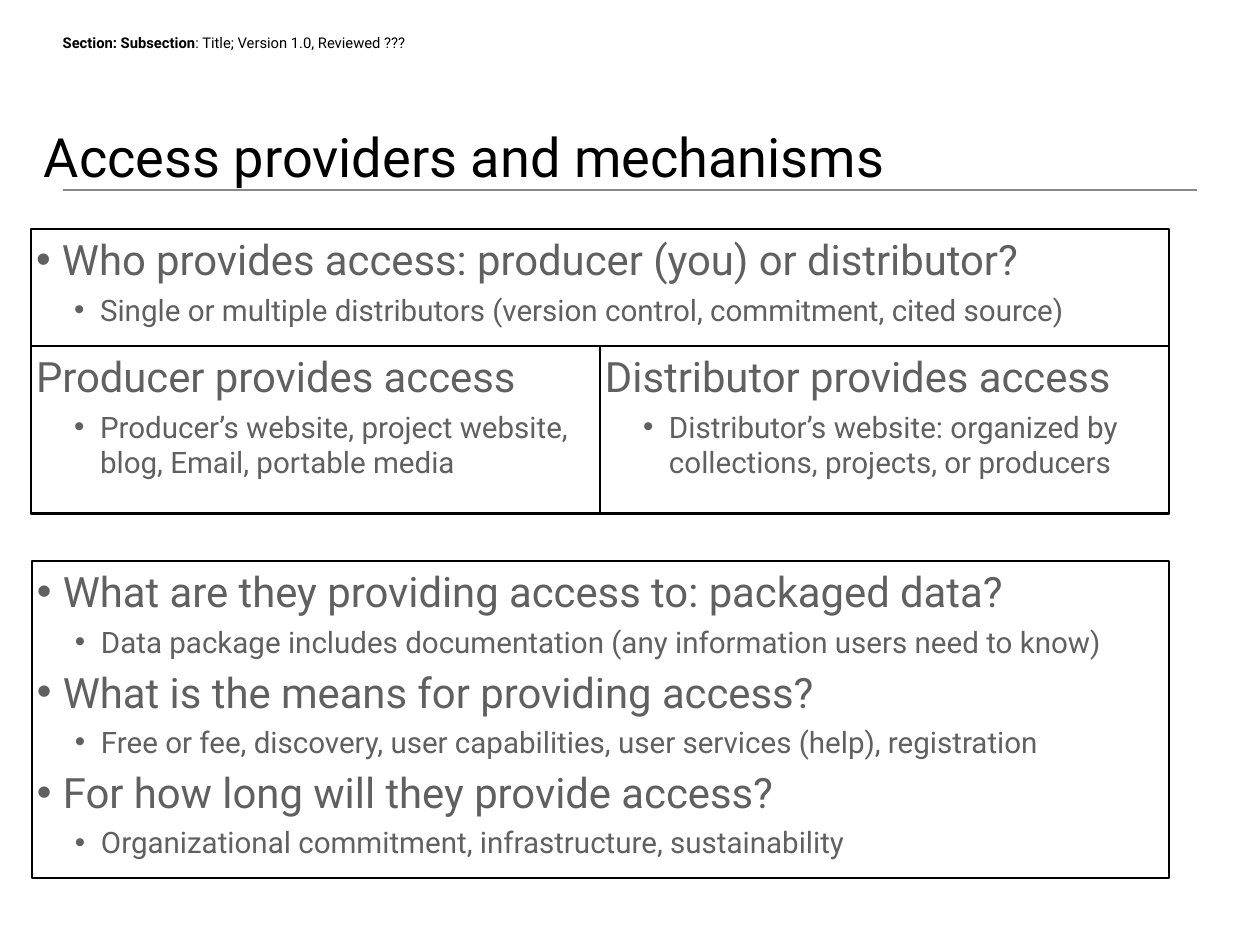
import pptx
import pptx.util
import pptx.dml.color
import pptx.enum.shapes
import pptx.enum.text
import pptx.oxml.ns
import lxml.etree

PX = 10320
SLIDE = (1260, 945)
FONT, BLACK, GREY, RULE = "Roboto", "000000", "606060", "888888"
HEADER = [("Section: Subsection", True), (": Title; Version 1.0, Reviewed ???", False)]
HEADER_AT = (54, 29, 361, 27)
TITLE = "Access providers and mechanisms"
TITLE_AT = (39, 57, 1165, 136)
RULE_AT = (63, 190, 1197, 190)
INSET, HANG, DETAIL_INDENT = 5, 26, 64
QUESTION, HEADING, DETAIL = "question", "heading", "detail"
STYLES = {QUESTION: (34, 0, HANG), HEADING: (34, 0, 0), DETAIL: (24, 1, DETAIL_INDENT)}
LEFT, HALF, SPLIT_TOP, SPLIT_HEIGHT = 31, 569, 346, 167

PANELS = [
    ((32, 561, 1137, 317), [
        (QUESTION, "What are they providing access to: packaged data?"),
        (DETAIL, "Data package includes documentation (any information users need to know)"),
        (QUESTION, "What is the means for providing access?"),
        (DETAIL, "Free or fee, discovery, user capabilities, user services (help), registration"),
        (QUESTION, "For how long will they provide access?"),
        (DETAIL, "Organizational commitment, infrastructure, sustainability"),
    ]),
    ((LEFT, 229, 2 * HALF, 285), [
        (QUESTION, "Who provides access: producer (you) or distributor?"),
        (DETAIL, "Single or multiple distributors (version control, commitment, cited source)"),
    ]),
]
PROVIDERS = [
    [(HEADING, "Producer provides access"),
     (DETAIL, "Producer’s website, project website, blog, Email, portable media")],
    [(HEADING, "Distributor provides access"),
     (DETAIL, "Distributor’s website: organized by collections, projects, or producers")],
]


def px(*lengths):
    return [pptx.util.Emu(length * PX) for length in lengths]


def color(value):
    return pptx.dml.color.RGBColor.from_string(value)


def add_run(paragraph, text, size, fill, bold=False):
    run = paragraph.add_run()
    run.text = text
    run.font.name, run.font.size, run.font.bold = FONT, pptx.util.Pt(size), bold
    run.font.color.rgb = color(fill)


def set_frame(frame, anchor):
    frame.word_wrap = True
    frame.auto_size = pptx.enum.text.MSO_AUTO_SIZE.NONE
    frame.vertical_anchor = anchor
    frame.margin_left, frame.margin_top, frame.margin_right, frame.margin_bottom = px(*[INSET] * 4)


def add_bullet(paragraph, indent):
    qn = pptx.oxml.ns.qn
    properties = paragraph._p.get_or_add_pPr()
    properties.set("marL", str(indent * PX))
    properties.set("indent", str(-HANG * PX))
    bullet_color = lxml.etree.SubElement(properties, qn("a:buClr"))
    lxml.etree.SubElement(bullet_color, qn("a:srgbClr"), val=GREY)
    lxml.etree.SubElement(properties, qn("a:buFont"), typeface="Arial")
    lxml.etree.SubElement(properties, qn("a:buChar"), char="•")


def add_panel(slide, place, lines):
    panel = slide.shapes.add_shape(pptx.enum.shapes.MSO_SHAPE.RECTANGLE, *px(*place))
    panel.shadow.inherit = False
    panel.fill.background()
    panel.line.color.rgb = color(BLACK)
    panel.line.width = pptx.util.Pt(2)
    frame = panel.text_frame
    set_frame(frame, pptx.enum.text.MSO_ANCHOR.TOP)
    for number, (kind, text) in enumerate(lines):
        size, level, indent = STYLES[kind]
        paragraph = frame.add_paragraph() if number else frame.paragraphs[0]
        if indent:
            add_bullet(paragraph, indent)
        paragraph.level = level
        paragraph.alignment = pptx.enum.text.PP_ALIGN.LEFT
        paragraph.space_before = pptx.util.Pt(6 if number else 0)
        add_run(paragraph, text, size, GREY)


def main():
    """Build the slide on access providers and mechanisms."""
    deck = pptx.Presentation()
    deck.slide_width, deck.slide_height = px(*SLIDE)
    slide = deck.slides.add_slide(deck.slide_layouts[5])

    title = slide.shapes.title
    title.left, title.top, title.width, title.height = px(*TITLE_AT)
    set_frame(title.text_frame, pptx.enum.text.MSO_ANCHOR.BOTTOM)
    heading = title.text_frame.paragraphs[0]
    heading.alignment = pptx.enum.text.PP_ALIGN.LEFT
    add_run(heading, TITLE, 44, BLACK)

    rule = slide.shapes.add_connector(pptx.enum.shapes.MSO_CONNECTOR.STRAIGHT, *px(*RULE_AT))
    rule.line.color.rgb = color(RULE)
    rule.line.width = pptx.util.Pt(1)
    lxml.etree.SubElement(rule._element.spPr, pptx.oxml.ns.qn("a:effectLst"))

    header = slide.shapes.add_textbox(*px(*HEADER_AT)).text_frame
    header.word_wrap = False
    for text, bold in HEADER:
        add_run(header.paragraphs[0], text, 12, BLACK, bold)

    columns = [((LEFT + column * HALF, SPLIT_TOP, HALF, SPLIT_HEIGHT), lines)
               for column, lines in enumerate(PROVIDERS)]
    for place, lines in PANELS + columns:
        add_panel(slide, place, lines)
    deck.save("out.pptx")


if __name__ == "__main__":
    main()
